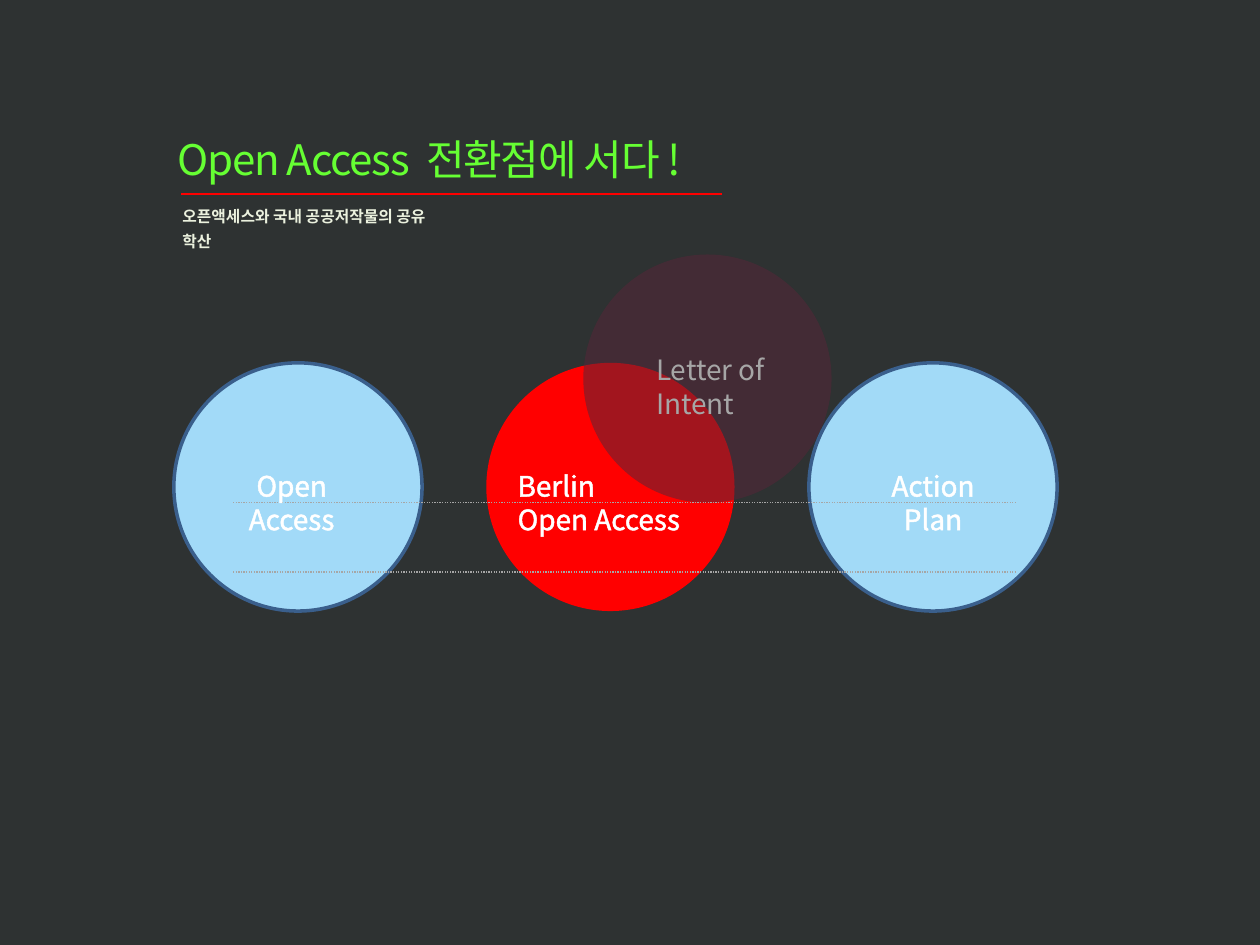
from lxml import etree
from pptx import Presentation
from pptx.dml.color import RGBColor
from pptx.enum.dml import MSO_LINE
from pptx.enum.shapes import MSO_CONNECTOR, MSO_SHAPE
from pptx.enum.text import MSO_ANCHOR, MSO_AUTO_SIZE, PP_ALIGN
from pptx.oxml.ns import qn
from pptx.util import Inches, Pt

LEFT, CENTER, JUSTIFY = PP_ALIGN.LEFT, PP_ALIGN.CENTER, PP_ALIGN.JUSTIFY
FONT = "Noto Sans CJK KR"
DIAMETER = 1.97
ROW_TOP = 2.88

TITLE = "Open Access  전환점에 서다 !"
SUBTITLE = "오픈액세스와 국내 공공저작물의 공유\v학산"
CIRCLES = [
    (1.38, ROW_TOP, "A2DAF8", "3A5F8C", None),
    (3.86, ROW_TOP, "FF0000", None, None),
    (4.63, 2.02, "562738", None, 55),
    (6.42, ROW_TOP, "A2DAF7", "3A5F8C", None),
]
RULES = [
    (1.85, 8.07, 4.54),
    (1.85, 8.07, 3.99),
]
LABELS = [
    ("Open Access", 1.71, 3.67, 1.21, CENTER, "FFFFFF", 0.75),
    ("Berlin\nOpen Access", 4.01, 3.67, 1.7, LEFT, "FFFFFF", 0.75),
    ("Letter of Intent", 5.11, 2.75, 1.7, LEFT, "A6A6A6", None),
    ("Action Plan", 6.8, 3.67, 1.21, CENTER, "FFFFFF", 0.75),
]


def rgb(value):
    return RGBColor.from_string(value)


def add_line(s, x1, x2, y, color, dash=None):
    line = s.shapes.add_connector(
        MSO_CONNECTOR.STRAIGHT, Inches(x1), Inches(y), Inches(x2), Inches(y))
    line.line.color.rgb = rgb(color)
    line.line.width = Pt(0.75)
    if dash is not None:
        line.line.dash_style = dash
    etree.SubElement(line._element.spPr, qn("a:effectLst"))


def add_circle(s, x, y, fill, outline, alpha):
    sp = s.shapes.add_shape(
        MSO_SHAPE.OVAL, Inches(x), Inches(y), Inches(DIAMETER), Inches(DIAMETER))
    sp.shadow.inherit = False
    sp.fill.solid()
    sp.fill.fore_color.rgb = rgb(fill)
    if alpha:
        clr = sp._element.spPr.find(qn("a:solidFill"))[0]
        etree.SubElement(clr, qn("a:alpha"), val=str(alpha * 1000))
    if outline:
        sp.line.color.rgb = rgb(outline)
        sp.line.width = Pt(2)
    else:
        sp.line.fill.background()


def set_text(sp, text, size, color, align=LEFT, bold=False, outline=None,
             spacing=None, leading=None, wrap=True):
    tf = sp.text_frame
    tf.text = text
    tf.word_wrap = wrap
    tf.auto_size = MSO_AUTO_SIZE.SHAPE_TO_FIT_TEXT
    tf.vertical_anchor = MSO_ANCHOR.TOP
    for p in tf.paragraphs:
        p.alignment = align
        if leading:
            p.line_spacing = Pt(leading)
        for r in p.runs:
            r.font.size = Pt(size)
            r.font.bold = bold
            r.font.name = FONT
            r.font.color.rgb = rgb(color)
            rPr = r.font._element
            etree.SubElement(rPr, qn("a:ea"), typeface=FONT)
            if spacing:
                rPr.set("spc", str(round(spacing * 100)))
            if outline:
                ln = etree.Element(qn("a:ln"), w=str(Pt(outline)))
                fill = etree.SubElement(ln, qn("a:solidFill"))
                etree.SubElement(fill, qn("a:srgbClr"), val=color)
                rPr.insert(0, ln)


def add_text(s, x, y, w, h, text, size, color, **style):
    sp = s.shapes.add_textbox(Inches(x), Inches(y), Inches(w), Inches(h))
    set_text(sp, text, size, color, **style)


def main():
    prs = Presentation()
    prs.slide_width, prs.slide_height = Inches(10), Inches(7.5)
    s = prs.slides.add_slide(prs.slide_layouts[5])
    s.background.fill.solid()
    s.background.fill.fore_color.rgb = rgb("2E3232")

    title = s.shapes.title
    title.left, title.top = Inches(1.31), Inches(1.01)
    title.width, title.height = Inches(4.49), Inches(0.5)
    set_text(title, TITLE, 24, "66FF33", align=JUSTIFY, outline=0.25, spacing=-0.7)
    add_line(s, 1.44, 5.73, 1.54, "FF0000")

    for circle in CIRCLES:
        add_circle(s, *circle)
    for x1, x2, y in RULES:
        add_line(s, x1, x2, y, "A6A6A6", MSO_LINE.ROUND_DOT)
    for text, x, y, w, align, color, outline in LABELS:
        add_text(s, x, y, w, 0.64, text, 16, color, align=align, outline=outline)
    add_text(s, 1.35, 1.55, 2.33, 0.3, SUBTITLE, 9, "EBF1DE",
             bold=True, leading=14, wrap=False)

    prs.save("out.pptx")


if __name__ == "__main__":
    main()
